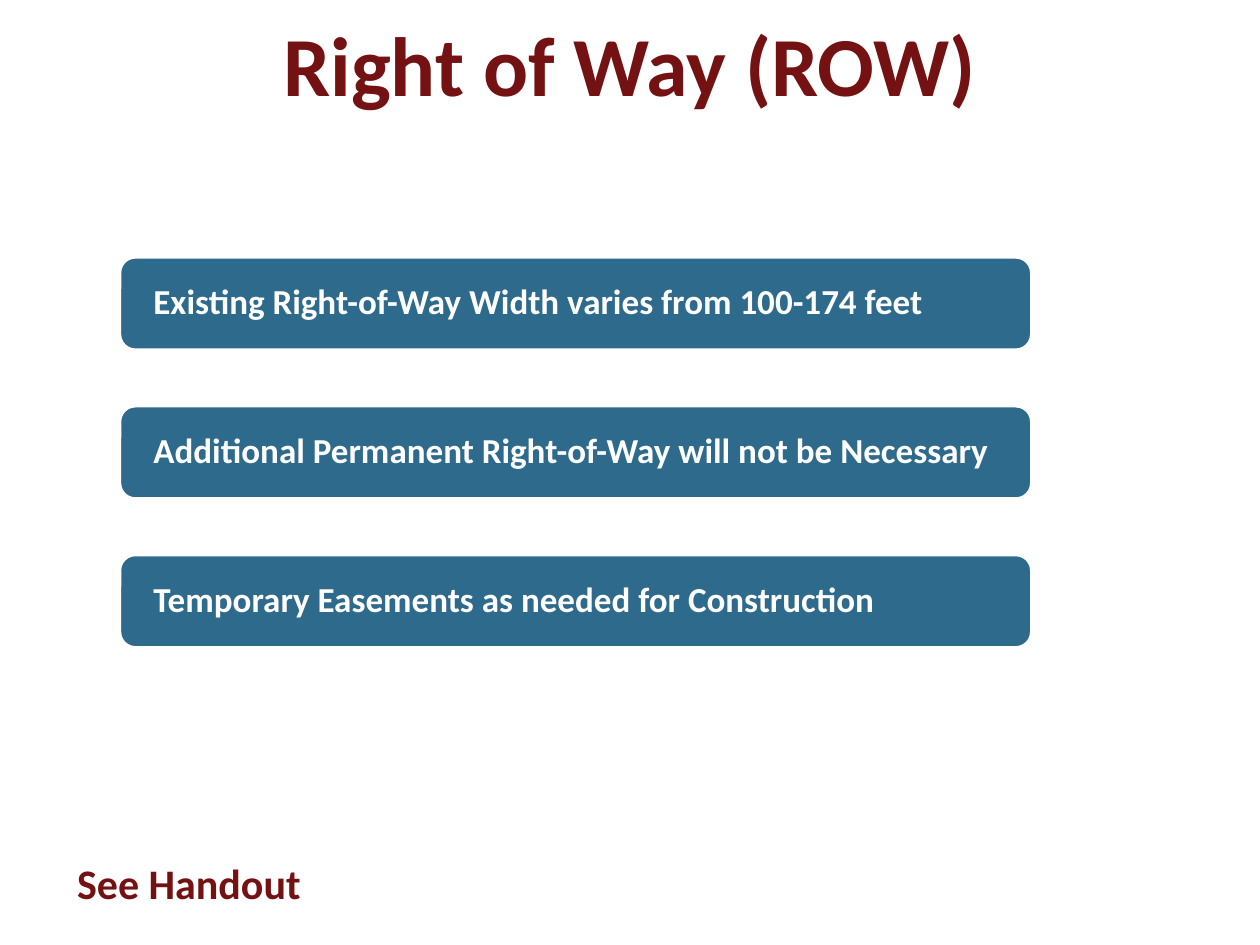
from pptx import Presentation
from pptx.dml.color import RGBColor
from pptx.enum.shapes import MSO_SHAPE as Kind
from pptx.enum.text import MSO_ANCHOR as Anchor, PP_ALIGN as Align
from pptx.util import Cm, Pt

MAROON = RGBColor(0x74, 0x11, 0x12)
BLUE = RGBColor(0x2E, 0x6A, 0x8C)
WHITE = RGBColor(0xFF, 0xFF, 0xFF)

POINTS = [
    "Existing Right-of-Way Width varies from 100-174 feet",
    "Additional Permanent Right-of-Way will not be Necessary",
    "Temporary Easements as needed for Construction",
]


def write(shape, text, size, color, align):
    frame = shape.text_frame
    frame.word_wrap = True
    frame.vertical_anchor = Anchor.MIDDLE
    para = frame.paragraphs[0]
    para.text = text
    para.alignment = align
    font = para.font
    font.name = "Calibri"
    font.size = Pt(size)
    font.bold = True
    font.color.rgb = color
    return frame


def add_label(slide, box, text, size):
    write(slide.shapes.add_textbox(*box), text, size, MAROON, Align.CENTER)


def add_bar(slide, box, text):
    bar = slide.shapes.add_shape(Kind.ROUNDED_RECTANGLE, *box)
    bar.adjustments[0] = 0.17
    bar.shadow.inherit = False
    bar.fill.solid()
    bar.fill.fore_color.rgb = BLUE
    bar.line.color.rgb = WHITE
    bar.line.width = Pt(2)
    frame = write(bar, text, 20, WHITE, Align.LEFT)
    frame.margin_left = frame.margin_right = Cm(0.59)
    frame.margin_top = frame.margin_bottom = Cm(0)
    frame.paragraphs[0].line_spacing = 0.9


def add_list(slide, box, points):
    """Stack one bar per point, each gap two thirds of a... bar pitch set by the box height."""
    left, top, width, height = box
    tall = Cm(1.88)
    pitch = (height - tall) // (len(points) - 1)
    for i, point in enumerate(points):
        add_bar(slide, (left, top + i * pitch, width, tall), point)


def main():
    deck = Presentation()
    deck.slide_width, deck.slide_height = Cm(25.4), Cm(19.05)
    slide = deck.slides.add_slide(deck.slide_layouts[6])
    add_label(slide, (Cm(1.27), Cm(0), Cm(22.86), Cm(2.54)),
              "Right of Way (ROW)", 48)
    add_label(slide, (Cm(1.27), Cm(17.15), Cm(5.08), Cm(1.27)),
              "See Handout", 24)
    add_list(slide, (Cm(2.41), Cm(5.18), Cm(18.39), Cm(7.88)), POINTS)
    deck.save("out.pptx")


if __name__ == "__main__":
    main()
